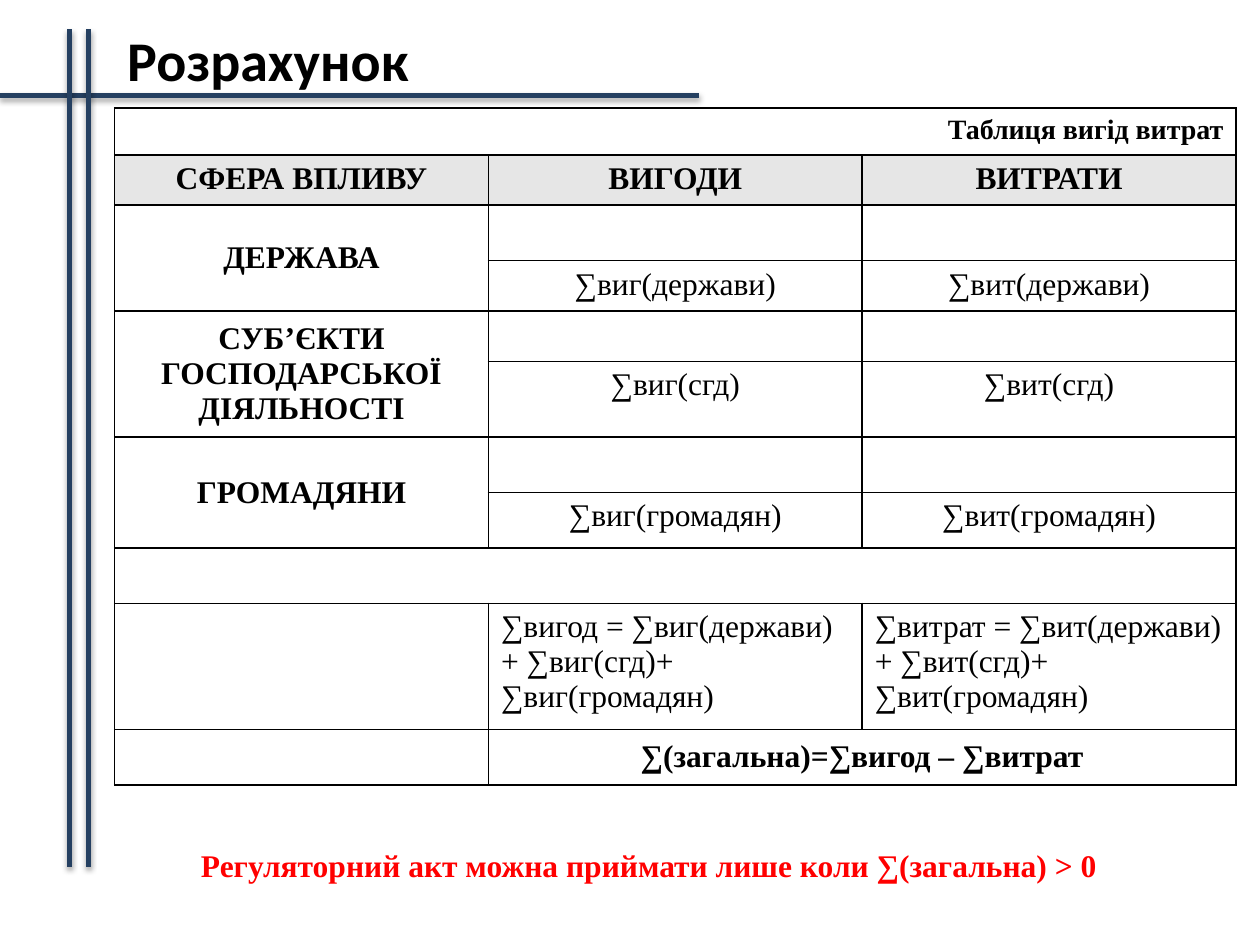
"""Build a slide with a table of regulatory benefits and costs."""
import lxml.etree
import pptx
import pptx.dml.color
import pptx.enum.shapes
import pptx.enum.text
import pptx.oxml
import pptx.oxml.ns
import pptx.util

WIDTH = pptx.util.Inches(10)
HEIGHT = pptx.util.Inches(7.5)
NAVY = pptx.dml.color.RGBColor(0x25, 0x40, 0x61)
BLACK = pptx.dml.color.RGBColor(0, 0, 0)
RED = pptx.dml.color.RGBColor(0xFF, 0, 0)
GREY = pptx.dml.color.RGBColor(0xE6, 0xE6, 0xE6)
SERIF = "Times New Roman"
LEFT = pptx.enum.text.PP_ALIGN.LEFT
CENTER = pptx.enum.text.PP_ALIGN.CENTER
RIGHT = pptx.enum.text.PP_ALIGN.RIGHT
MIDDLE = pptx.enum.text.MSO_ANCHOR.MIDDLE
TOP = pptx.enum.text.MSO_ANCHOR.TOP
NAMESPACE = pptx.oxml.ns.nsdecls("a")
ROW_HEIGHTS = [0.37, 0.4, 0.44, 0.4, 0.4, 0.6, 0.44, 0.44, 0.44, 1.0, 0.44]
SPHERES = [
    ("ДЕРЖАВА", "держави"),
    ("СУБ’ЄКТИ ГОСПОДАРСЬКОЇ ДІЯЛЬНОСТІ", "сгд"),
    ("ГРОМАДЯНИ", "громадян"),
]


def across(share):
    """Return a percentage of the slide's width."""
    return round(WIDTH * share / 100)


def down(share):
    """Return a percentage of the slide's height."""
    return round(HEIGHT * share / 100)


def write(frame, text, size=18, font=SERIF, color=BLACK, bold=False, align=LEFT):
    """Put formatted text into the first paragraph of a frame."""
    para = frame.paragraphs[0]
    para.alignment = align
    span = para.add_run()
    span.text = text
    span.font.size = pptx.util.Pt(size)
    span.font.name = font
    span.font.bold = bold
    span.font.color.rgb = color


def add_text(page, left, top, width, height, text, **style):
    """Add a wrapping text box placed in shares of the slide."""
    box = page.shapes.add_textbox(across(left), down(top), across(width), down(height))
    box.text_frame.word_wrap = True
    write(box.text_frame, text, **style)


def add_rule(page, start, end):
    """Add a navy line with a soft shadow below it."""
    rule = page.shapes.add_connector(
        pptx.enum.shapes.MSO_CONNECTOR.STRAIGHT,
        across(start[0]), down(start[1]), across(end[0]), down(end[1]))
    rule.line.color.rgb = NAVY
    rule.line.width = pptx.util.Pt(3)
    blur, distance = pptx.util.Pt(3.1), pptx.util.Pt(1.8)
    rule._element.spPr.append(pptx.oxml.parse_xml(
        f'<a:effectLst {NAMESPACE}><a:outerShdw blurRad="{blur}" dist="{distance}" '
        'dir="5400000" rotWithShape="0"><a:srgbClr val="000000">'
        '<a:alpha val="35000"/></a:srgbClr></a:outerShdw></a:effectLst>'))


def style_cell(cell):
    """Give a cell a clear fill and thin black borders."""
    cell.fill.background()
    properties = cell._tc.get_or_add_tcPr()
    for place, side in enumerate("LRTB"):
        properties.insert(place, pptx.oxml.parse_xml(
            f'<a:ln{side} {NAMESPACE} w="{pptx.util.Pt(1)}"><a:solidFill>'
            f'<a:srgbClr val="{BLACK}"/></a:solidFill></a:ln{side}>'))


def fill_cell(table, row, column, text, anchor=TOP, **style):
    """Write text into one cell of the table."""
    cell = table.cell(row, column)
    cell.vertical_anchor = anchor
    write(cell.text_frame, text, **style)


def merge(table, row, column, last_row, last_column):
    """Join a block of cells."""
    table.cell(row, column).merge(table.cell(last_row, last_column))


def add_balance_table(page):
    """Add the table that sums benefits and costs by sphere."""
    table = page.shapes.add_table(
        len(ROW_HEIGHTS), 3, across(9.1), down(11.45), across(89), down(71.6)).table
    table.first_row = table.horz_banding = False
    for column in table.columns:
        column.width = across(89 / 3)
    for row, height in zip(table.rows, ROW_HEIGHTS):
        row.height = pptx.util.Inches(height)
    for cell in table.iter_cells():
        style_cell(cell)

    for row, column in ((0, 0), (8, 0), (10, 1)):
        merge(table, row, column, row, 2)
    fill_cell(table, 0, 0, "Таблиця вигід витрат", size=16, bold=True, align=RIGHT)
    for column, heading in enumerate(("СФЕРА ВПЛИВУ", "ВИГОДИ", "ВИТРАТИ")):
        fill_cell(table, 1, column, heading, bold=True, align=CENTER)
        table.cell(1, column).fill.solid()
        table.cell(1, column).fill.fore_color.rgb = GREY

    for index, (sphere, short) in enumerate(SPHERES):
        row = 2 + 2 * index
        merge(table, row, 0, row + 1, 0)
        fill_cell(table, row, 0, sphere, anchor=MIDDLE, bold=True, align=CENTER)
        for column, kind in enumerate(("виг", "вит"), 1):
            fill_cell(table, row + 1, column, f"∑{kind}({short})", align=CENTER)

    for column, (total, kind) in enumerate((("вигод", "виг"), ("витрат", "вит")), 1):
        parts = "+ ".join(f"∑{kind}({short})" for _, short in SPHERES)
        fill_cell(table, 9, column, f"∑{total} = {parts}")
    fill_cell(table, 10, 1, "∑(загальна)=∑вигод – ∑витрат",
              anchor=MIDDLE, bold=True, align=CENTER)


def main():
    """Build and save the deck."""
    deck = pptx.Presentation()
    deck.slide_width, deck.slide_height = WIDTH, HEIGHT
    page = deck.slides.add_slide(deck.slide_layouts[6])
    add_rule(page, (0, 10.1), (55.5, 10.1))
    for x in (5.5, 7):
        add_rule(page, (x, 3.1), (x, 91.7))
    add_text(page, 9.1, 2, 64.8, 8.5, "Розрахунок", size=32, font="Calibri", bold=True)
    add_balance_table(page)
    add_text(page, 7, 88.9, 89, 5.3,
             "Регуляторний акт можна приймати лише коли ∑(загальна) > 0",
             color=RED, bold=True, align=CENTER)
    deck.save("out.pptx")


if __name__ == "__main__":
    main()
